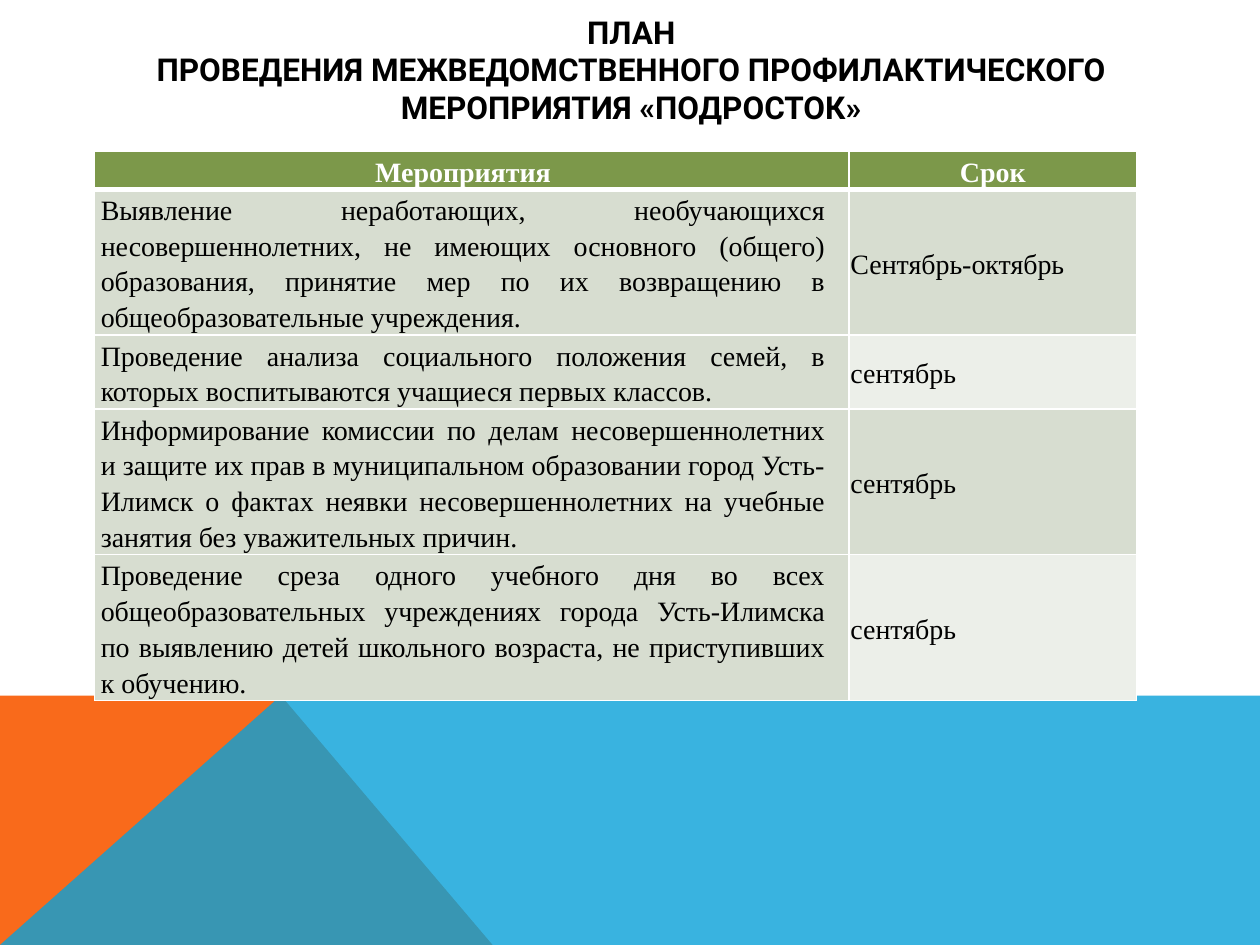
from lxml.etree import SubElement as Sub
from pptx import Presentation
from pptx.dml.color import RGBColor
from pptx.enum.text import MSO_ANCHOR as Anchor, MSO_AUTO_SIZE as Fit, PP_ALIGN as Align
from pptx.oxml.ns import qn
from pptx.util import Inches, Pt

HEAD = ("Мероприятия", "Срок")
PLAN = [
    ("Выявление неработающих, необучающихся несовершеннолетних, не имеющих "
     "основного (общего) образования, принятие мер по их возвращению в "
     "общеобразовательные учреждения.", "Сентябрь-октябрь"),
    ("Проведение анализа социального положения семей, в которых воспитываются "
     "учащиеся первых классов.", "сентябрь"),
    ("Информирование комиссии по делам несовершеннолетних и защите их прав в "
     "муниципальном образовании город Усть-Илимск о фактах неявки "
     "несовершеннолетних на учебные занятия без уважительных причин.", "сентябрь"),
    ("Проведение среза одного учебного дня во всех общеобразовательных "
     "учреждениях города Усть-Илимска по выявлению детей школьного возраста, "
     "не приступивших к обучению.", "сентябрь"),
]
WIDTHS = (5.99, 2.28)
HEIGHTS = (0.29, 1.15, 0.58, 1.15, 1.15)


def paint(part, color):
    part.solid()
    part.fore_color.rgb = RGBColor.from_string(color)


def style(para, font, size, color, bold, align):
    para.alignment = align
    para.font.name = font
    para.font.size = Pt(size)
    para.font.bold = bold
    para.font.color.rgb = RGBColor.from_string(color)


def border(cell, low):
    """White lines on all four sides; low is the width of the bottom one."""
    props = cell._tc.get_or_add_tcPr()
    for spot, (side, width) in enumerate(
            (("lnL", 1), ("lnR", 1), ("lnT", 1), ("lnB", low))):
        line = Sub(props, qn("a:" + side), w=str(Pt(width)))
        fill = Sub(line, qn("a:solidFill"))
        Sub(fill, qn("a:srgbClr"), val="FFFFFF")
        props.insert(spot, line)


def add_band(slide, left, top, width, height):
    """Orange wedge with a translucent blue sheet over it."""
    peak = left + 2.23
    base = top + height

    def draw(points, color):
        start, *rest = [(Inches(x), Inches(y)) for x, y in points]
        pen = slide.shapes.build_freeform(*start)
        pen.add_line_segments(rest, close=True)
        shape = pen.convert_to_shape()
        shape.shadow.inherit = False
        paint(shape.fill, color)
        shape.line.fill.background()
        return shape

    draw([(left, base), (left, top), (peak, top), (left + 3.91, base)], "F96A1B")
    sheet = draw([(left, base), (peak, top), (left + width, top),
                  (left + width, base)], "08A1D9")
    tint = sheet._element.spPr.find(".//" + qn("a:srgbClr"))
    Sub(tint, qn("a:alpha"), val="80000")


def add_title(slide, left, top, width, height):
    title = slide.shapes.title
    title.left, title.top = Inches(left), Inches(top)
    title.width, title.height = Inches(width), Inches(height)
    frame = title.text_frame
    frame.text = ("ПЛАН\vПРОВЕДЕНИЯ МЕЖВЕДОМСТВЕННОГО ПРОФИЛАКТИЧЕСКОГО "
                  "МЕРОПРИЯТИЯ «ПОДРОСТОК»")
    frame.word_wrap = True
    frame.auto_size = Fit.NONE
    frame.vertical_anchor = Anchor.MIDDLE
    frame.margin_bottom = Inches(0.35)  # lifts the lines clear of the table
    style(frame.paragraphs[0], "Roboto", 18, "000000", True, Align.CENTER)


def add_plan(slide, left, top):
    rows = [HEAD, *PLAN]
    table = slide.shapes.add_table(
        len(rows), len(HEAD), Inches(left), Inches(top),
        Inches(sum(WIDTHS)), Inches(sum(HEIGHTS))).table
    for col, width in zip(table.columns, WIDTHS):
        col.width = Inches(width)
    for row, height in zip(table.rows, HEIGHTS):
        row.height = Inches(height)

    for r, texts in enumerate(rows):
        for c, text in enumerate(texts):
            cell = table.cell(r, c)
            cell.text = text
            cell.vertical_anchor = Anchor.MIDDLE
            cell.margin_top = cell.margin_bottom = Inches(0.01)
            cell.margin_left = Inches(0.01 if c else 0.05)
            cell.margin_right = Inches(0.01 if c else 0.19)
            para = cell.text_frame.paragraphs[0]
            para.line_spacing = 1.15
            if r == 0:
                fill, ink, align = "7C984A", "FFFFFF", Align.CENTER
            else:
                # Only the second column is banded
                fill = "ECEFE9" if c and r % 2 == 0 else "D7DDD0"
                ink, align = "000000", Align.LEFT if c else Align.JUSTIFY
            style(para, "Times New Roman", 16, ink, r == 0, align)
            paint(cell.fill, fill)
            border(cell, 1 if r else 3)


def main():
    deck = Presentation()
    deck.slide_width, deck.slide_height = Inches(10), Inches(7.5)
    slide = deck.slides.add_slide(deck.slide_layouts[5])
    add_band(slide, 0, 5.52, 10, 1.98)
    add_title(slide, 0.9, 0.4, 8.22, 0.6)
    add_plan(slide, 0.75, 1.2)
    deck.save("out.pptx")


if __name__ == "__main__":
    main()
